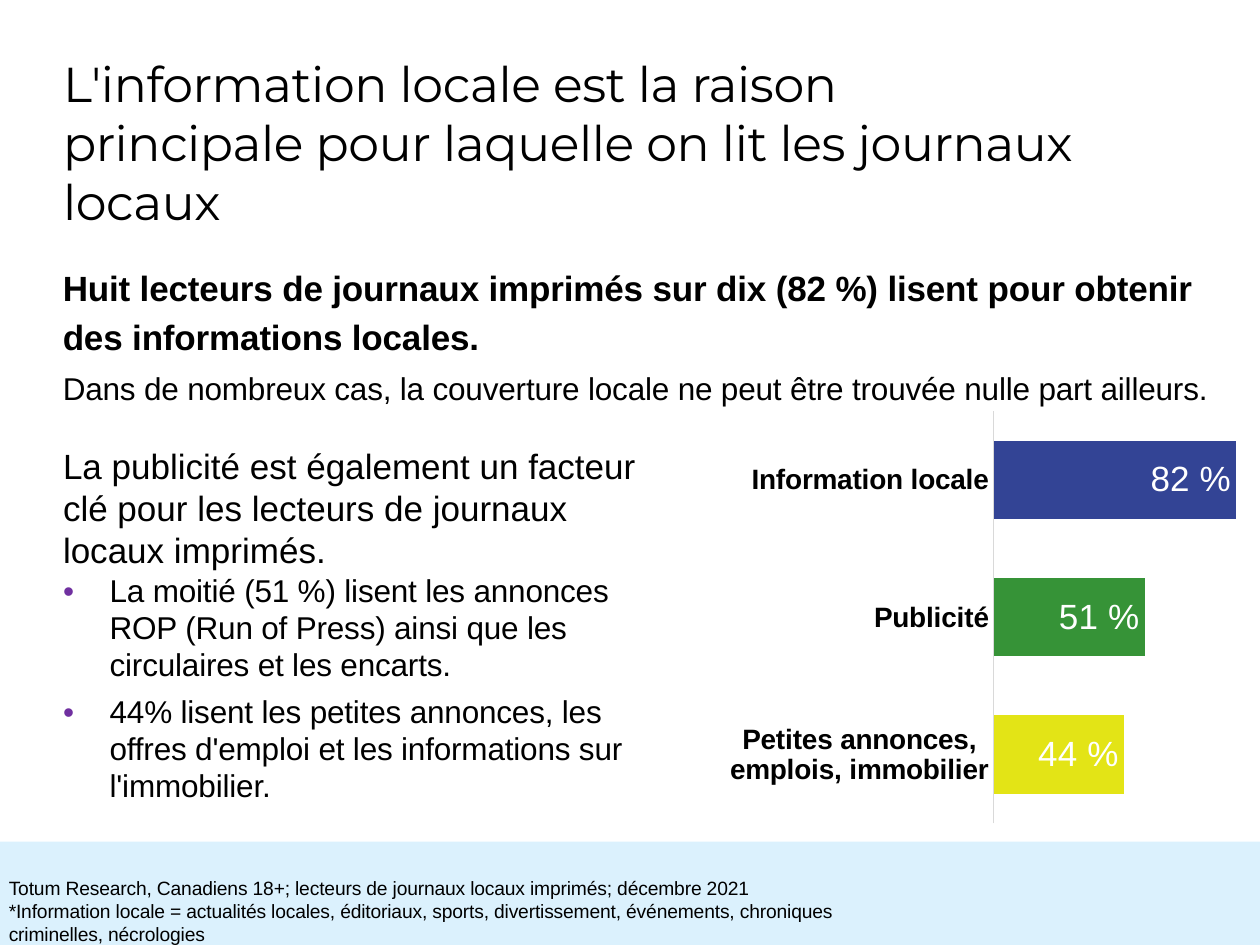
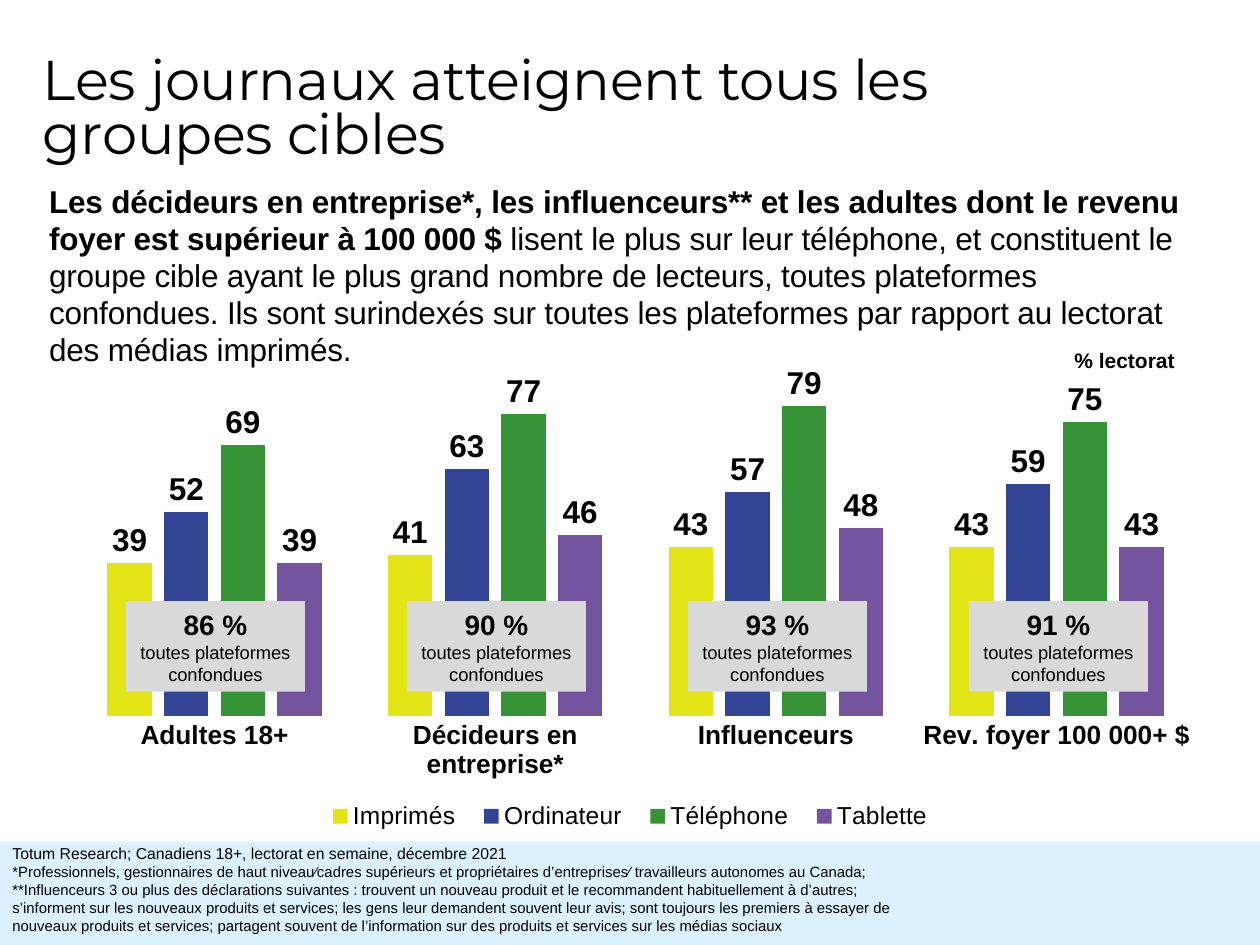
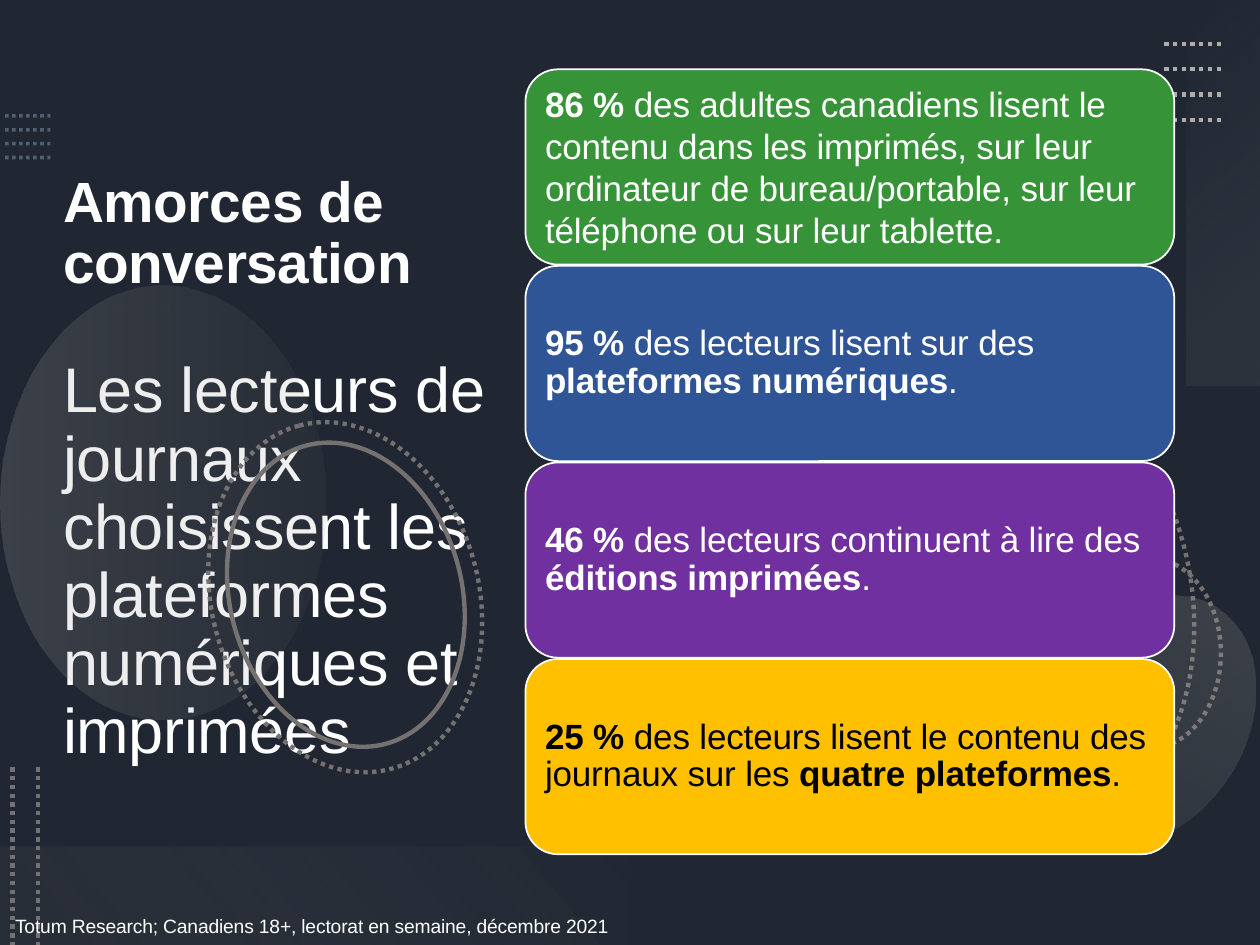
from dataclasses import dataclass
from lxml import etree
from pptx import Presentation
from pptx.chart.data import CategoryChartData as Data
from pptx.dml.color import RGBColor
from pptx.enum.chart import XL_CHART_TYPE as Kind, XL_LABEL_POSITION as Spot
from pptx.enum.chart import XL_LEGEND_POSITION as Side, XL_TICK_MARK as Tick
from pptx.enum.dml import MSO_LINE as Dash
from pptx.enum.shapes import MSO_CONNECTOR as Link, MSO_SHAPE as Form
from pptx.enum.text import MSO_ANCHOR as Anchor, MSO_AUTO_SIZE as Fit, PP_ALIGN as Align
from pptx.oxml.ns import qn
from pptx.util import Inches, Pt

BLACK, WHITE = "000000", "FFFFFF"
PALE, GREY, NIGHT = "DBF1FD", "D9D9D9", "202732"
LIME, NAVY, GREEN, MAUVE = "E3E416", "334495", "369337", "74539F"
BLUE, VIOLET, GOLD = "2F5597", "7030A0", "FFC000"
STEEL, SILVER, STONE = "8497B0", "AFABAB", "767171"
SOURCE = "Totum Research; Canadiens 18+, lectorat en semaine, décembre 2021"


def rgb(code):
    """Turn a hex string into a colour."""
    return RGBColor.from_string(code)


def add(node, tag, **attrs):
    """Append a child element with attributes."""
    child = etree.SubElement(node, qn(tag))
    for key, val in attrs.items():
        child.set(key, str(val))
    return child


def fade(node, part):
    """Set the opacity, in percent, of every colour under a node."""
    for clr in node.iter(qn("a:srgbClr")):
        add(clr, "a:alpha", val=part * 1000)


def place(node, x, y, w, h, inner=False):
    """Give a chart part a manual layout and return it."""
    for old in node.findall(qn("c:layout")):
        node.remove(old)
    lay = add(node, "c:layout")
    man = add(lay, "c:manualLayout")
    if inner:
        add(man, "c:layoutTarget", val="inner")
    for tag in ("xMode", "yMode"):
        add(man, "c:" + tag, val="edge")
    for tag, val in zip("xywh", (x, y, w, h)):
        add(man, "c:" + tag, val=val)
    return lay


@dataclass
class Row:
    """One paragraph; bars in its text switch bold on and off."""
    text: str
    size: float = 18
    color: str = BLACK
    font: str = "Arial"
    bold: bool = False
    align: int = Align.LEFT
    track: int = -10
    lead: object = None
    gap: float = 0
    bullet: str = ""


class Deck:
    """Holds the style and the current slide."""

    def __init__(self):
        """Start a ten by seven and a half inch deck."""
        self.prs = Presentation()
        self.prs.slide_width, self.prs.slide_height = Inches(10), Inches(7.5)

    def page(self, kind, back=WHITE, band=True):
        """Add a slide with its ground and footer band."""
        self.slide = self.prs.slides.add_slide(self.prs.slide_layouts[kind])
        ground = self.slide.background.fill
        ground.solid()
        ground.fore_color.rgb = rgb(back)
        if band:
            self.shape(Form.RECTANGLE, 0, 6.68, 10, 0.82, PALE)

    def put(self, frame, rows, anchor=Anchor.TOP):
        """Fill a text frame with formatted rows."""
        frame.word_wrap = True
        frame.auto_size = Fit.NONE
        frame.vertical_anchor = anchor
        for num, row in enumerate(rows):
            para = frame.add_paragraph() if num else frame.paragraphs[0]
            para.alignment = row.align
            para.space_before = Pt(row.gap)
            if row.lead:
                para.line_spacing = row.lead
            prop = para._p.get_or_add_pPr()
            step = Inches(0.37) if row.bullet else 0
            prop.set("marL", str(step))
            prop.set("indent", str(-step))
            if row.bullet:
                add(add(prop, "a:buClr"), "a:srgbClr", val=row.bullet)
                add(prop, "a:buChar", char="•")
            else:
                add(prop, "a:buNone")
            for turn, part in enumerate(row.text.split("|")):
                if part:
                    run = para.add_run()
                    run.text = part
                    self.style(run.font, row.size, row.bold or turn % 2 == 1, row.color, row.font)
                    run._r.get_or_add_rPr().set("spc", str(row.track))

    def style(self, font, size, bold=False, color=BLACK, name="Arial"):
        """Format a font."""
        font.name, font.size, font.bold = name, Pt(size), bold
        font.color.rgb = rgb(color)

    def hold(self, item, x, y, w, h, rows, anchor=Anchor.TOP):
        """Move a placeholder and fill it."""
        item.left, item.top, item.width, item.height = map(Inches, (x, y, w, h))
        self.put(item.text_frame, rows, anchor)

    def title(self, x, y, w, h, *rows, anchor=Anchor.MIDDLE):
        """Fill the title placeholder."""
        self.hold(self.slide.shapes.title, x, y, w, h, rows, anchor)

    def body(self, x, y, w, h, *rows):
        """Fill the body placeholder."""
        self.hold(self.slide.placeholders[1], x, y, w, h, rows)

    def box(self, x, y, w, h, *rows, inset=0.1):
        """Add a text box."""
        item = self.slide.shapes.add_textbox(*map(Inches, (x, y, w, h)))
        item.text_frame.margin_left = Inches(inset)
        self.put(item.text_frame, rows)

    def shape(self, form, x, y, w, h, fill=None, line=None, width=2.5, dash=None, turn=0):
        """Add a preset shape; a tuple fill is an angle and its stops."""
        item = self.slide.shapes.add_shape(form, *map(Inches, (x, y, w, h)))
        item.shadow.inherit = False
        item.rotation = turn
        if isinstance(fill, tuple):
            self.blend(item, *fill)
        elif fill:
            item.fill.solid()
            item.fill.fore_color.rgb = rgb(fill)
        else:
            item.fill.background()
        if line:
            self.stroke(item.line, line, width, dash)
        else:
            item.line.fill.background()
        return item

    def blend(self, item, angle, *stops):
        """Fill a shape with a see-through gradient."""
        prop = item._element.spPr
        grad = add(prop, "a:gradFill", rotWithShape=1)
        group = add(grad, "a:gsLst")
        for pos, color, part in stops:
            stop = add(group, "a:gs", pos=pos * 1000)
            add(stop, "a:srgbClr", val=color)
            fade(stop, part)
        add(grad, "a:lin", ang=angle * 60000, scaled=0)
        prop.find(qn("a:prstGeom")).addnext(grad)

    def stroke(self, line, color, width, dash):
        """Format an outline."""
        line.color.rgb = rgb(color)
        line.width = Pt(width)
        if dash:
            line.dash_style = dash

    def dots(self, x, y, far, low, color, width=2.5, part=None):
        """Add a dotted line."""
        item = self.slide.shapes.add_connector(Link.STRAIGHT, *map(Inches, (x, y, far, low)))
        self.stroke(item.line, color, width, Dash.ROUND_DOT)
        if part:
            fade(item._element.spPr, part)
        add(item._element.spPr, "a:effectLst")

    def chart(self, kind, area, plot, cats, sets, top, gap, size):
        """Add a bar chart with a hidden value axis."""
        data = Data()
        data.categories = cats
        for name, vals in sets:
            data.add_series(name, vals)
        chart = self.slide.shapes.add_chart(kind, *map(Inches, area), data).chart
        self.style(chart.font, size)
        chart.has_title = chart.has_legend = False
        axis = chart.value_axis
        axis.minimum_scale, axis.maximum_scale = 0, top
        axis.has_major_gridlines = axis.visible = False
        chart.category_axis.major_tick_mark = Tick.NONE
        self.style(chart.category_axis.tick_labels.font, size, True)
        chart.plots[0].gap_width = gap
        chart.plots[0].vary_by_categories = False
        zone = chart._chartSpace.chart.plotArea
        zone.insert(0, place(zone, *plot, inner=True))
        return chart

    def paint(self, part, color):
        """Fill a chart series or point."""
        part.format.fill.solid()
        part.format.fill.fore_color.rgb = rgb(color)

    def label(self, series, spot, size, form, bold=False, color=BLACK):
        """Show the values of a series."""
        tags = series.data_labels
        tags.show_value = True
        tags.position = spot
        tags.number_format, tags.number_format_is_linked = form, False
        self.style(tags.font, size, bold, color)


def reason(deck):
    """Build the slide on why people read."""
    deck.page(1)
    deck.title(0.4, 0.4, 8.3, 1.45, Row(
        "L'information locale est la raison principale pour laquelle on lit les journaux locaux",
        28, font="Montserrat", track=-20))
    deck.box(0, 6.91, 7.4, 0.59,
             Row("Totum Research, Canadiens 18+; lecteurs de journaux locaux imprimés; décembre 2021",
                 11, lead=Pt(13.1)),
             Row("*Information locale = actualités locales, éditoriaux, sports, divertissement, "
                 "événements, chroniques criminelles, nécrologies", 11, lead=Pt(13.1)), inset=0.07)
    deck.body(0.4, 3.48, 5, 3.1,
              Row("La publicité est également un facteur clé pour les lecteurs de journaux "
                  "locaux imprimés.", 20, track=0),
              Row("La moitié (51 %) lisent les annonces ROP (Run of Press) ainsi que les "
                  "circulaires et les encarts.", lead=0.98, gap=1.4, bullet=VIOLET),
              Row("44% lisent les petites annonces, les offres d'emploi et les informations sur "
                  "l'immobilier.", lead=0.97, gap=5.7, bullet=VIOLET))
    chart = deck.chart(Kind.BAR_CLUSTERED, (5.6, 3.16, 4.4, 3.48), (0.52, 0.03, 0.48, 0.94),
                       ["Petites annonces, emplois, immobilier", "Publicité", "Information locale"],
                       [("Lecteurs", [0.44, 0.51, 0.82])], 0.9, 75, 16)
    edge = chart.category_axis.format.line
    edge.color.rgb = rgb(GREY)
    edge.width = Pt(0.75)
    bars = chart.plots[0].series[0]
    for num, color in enumerate((LIME, GREEN, NAVY)):
        deck.paint(bars.points[num], color)
    deck.label(bars, Spot.INSIDE_END, 20, "0 %", color=WHITE)
    deck.box(0.4, 2.01, 9.42, 1.24,
             Row("Huit lecteurs de journaux imprimés sur dix (82 %) lisent pour obtenir des "
                 "informations locales.", 20, bold=True, lead=Pt(28.1)),
             Row("Dans de nombreux cas, la couverture locale ne peut être trouvée nulle part "
                 "ailleurs.", lead=Pt(27.9)))


def reach(deck):
    """Build the slide on target groups."""
    deck.page(5)
    chart = deck.chart(Kind.COLUMN_CLUSTERED, (0.5, 2.06, 9, 4.83), (0.01, 0.17, 0.99, 0.58),
                       ["Adultes 18+", "Décideurs en entreprise*", "Influenceurs",
                        "Rev. foyer 100 000+ $"],
                       [("Imprimés", [39, 41, 43, 43]), ("Ordinateur", [52, 63, 57, 59]),
                        ("Téléphone", [69, 77, 79, 75]), ("Tablette", [39, 46, 48, 43])],
                       90, 150, 15)
    chart.plots[0].overlap = -28
    chart.category_axis.format.line.fill.background()
    for series, color in zip(chart.plots[0].series, (LIME, NAVY, GREEN, MAUVE)):
        deck.paint(series, color)
        deck.label(series, Spot.OUTSIDE_END, 18, "0", True)
    chart.has_legend = True
    key = chart.legend
    key.position = Side.BOTTOM
    key.include_in_layout = False
    deck.style(key.font, 14)
    node = key._element
    node.find(qn("c:legendPos")).addnext(place(node, 0.22, 0.88, 0.56, 0.07))
    deck.title(0.24, 0.41, 8.19, 0.98,
               Row("Les journaux atteignent tous les groupes cibles", 32,
                   font="Montserrat", track=-20, lead=0.8), anchor=Anchor.TOP)
    deck.box(0.26, 1.41, 9.33, 1.6,
             Row("|Les décideurs en entreprise*, les influenceurs** et les adultes dont le revenu "
                 "foyer est supérieur à 100 000 $ |lisent le plus sur leur téléphone, et "
                 "constituent le groupe cible ayant le plus grand nombre de lecteurs, toutes "
                 "plateformes confondues. Ils sont surindexés sur toutes les plateformes par "
                 "rapport au lectorat des médias imprimés.", lead=0.98), inset=0.13)
    deck.box(0, 6.65, 7.32, 0.82, Row(SOURCE, 9, track=0),
             Row("*Professionnels, gestionnaires de haut niveau∕cadres supérieurs et propriétaires "
                 "d’entreprises∕ travailleurs autonomes au Canada; **Influenceurs 3 ou plus des "
                 "déclarations suivantes : trouvent un nouveau produit et le recommandent "
                 "habituellement à d’autres; s’informent sur les nouveaux produits et services; "
                 "les gens leur demandent souvent leur avis; sont toujours les premiers à essayer "
                 "de nouveaux produits et services; partagent souvent de l’information sur des "
                 "produits et services sur les médias sociaux", 8.5, track=0))
    for num, share in enumerate((86, 90, 93, 91)):
        tag = deck.shape(Form.RECTANGLE, 1 + num * 2.23, 4.77, 1.42, 0.72, GREY)
        deck.put(tag.text_frame, [
            Row(f"{share} %", 16, bold=True, align=Align.CENTER, track=0),
            Row("toutes plateformes confondues", 10.5, align=Align.CENTER, track=0)])
    deck.box(8.25, 2.71, 1.35, 0.3,
             Row("% lectorat", 12, bold=True, align=Align.CENTER, track=0))


def decor(deck):
    """Draw the dotted lines, rings and soft shapes of the dark slide."""
    for num in range(4):
        low, high = 0.92 + num * 0.11, 0.35 + num * 0.2
        deck.dots(0.04, low, 0.4, low, STEEL, 2, 50)
        deck.dots(9.24, high, 9.69, high, SILVER)
    for x, y, w, h, turn, dash in (
            (6.03, 3.23, 3.9, 2.92, 75, Dash.ROUND_DOT),
            (8.56, 4.43, 1.13, 1.51, 0, Dash.ROUND_DOT),
            (1.33, 3.68, 2.82, 2.12, 75, Dash.ROUND_DOT),
            (1.52, 3.8, 2.45, 1.84, 75, None)):
        deck.shape(Form.OVAL, x, y, w, h, line=STONE, dash=dash, turn=turn)
    deck.shape(Form.OVAL, 0, 2.27, 2.58, 3.44, (0, (0, SILVER, 20), (100, STONE, 10)))
    deck.shape(Form.OVAL, 8.33, 4.67, 1.56, 2.08,
               (90, (0, SILVER, 10), (100, SILVER, 20)), turn=210)
    deck.shape(Form.RECTANGLE, 9.42, 0, 0.58, 3.06, (50, (0, "F5F5F5", 0), (100, SILVER, 10)))
    deck.shape(Form.RECTANGLE, 0, 6.72, 5, 0.78, (320, (10, STONE, 10), (100, "F1F0F0", 0)))
    for x in (0.1, 0.3):
        deck.dots(x, 6.09, x, 7.5, STONE)


def talk(deck):
    """Build the slide of conversation starters."""
    deck.page(5, NIGHT, False)
    decor(deck)
    deck.title(0.4, 0.75, 3.73, 5.96,
               Row("Amorces de conversation", 32.4, WHITE, bold=True, track=-20, lead=0.9),
               Row("Les lecteurs de journaux choisissent les plateformes numériques et imprimées",
                   36, WHITE, track=-20, lead=0.9, gap=36))
    deck.box(0.01, 7.21, 8.17, 0.29, Row(SOURCE, 11, WHITE), inset=0.11)
    cards = (
        (GREEN, WHITE, 1.0, "|86 % |des adultes canadiens lisent le contenu dans les imprimés, sur "
         "leur ordinateur de bureau/portable, sur leur téléphone ou sur leur tablette."),
        (BLUE, WHITE, 0.9, "|95 % |des lecteurs lisent sur des |plateformes numériques|."),
        (VIOLET, WHITE, 0.9, "|46 % |des lecteurs continuent à lire des |éditions imprimées|."),
        (GOLD, BLACK, 0.9, "|25 % |des lecteurs lisent le contenu des journaux sur les "
         "|quatre plateformes|."))
    for num, (fill, ink, lead, text) in enumerate(cards):
        card = deck.shape(Form.ROUNDED_RECTANGLE, 4.17, 0.55 + num * 1.56, 5.15, 1.55,
                          fill, WHITE, 1)
        frame = card.text_frame
        frame.margin_left = frame.margin_right = Inches(0.08)
        deck.put(frame, [Row(text, 20, ink, lead=lead)], Anchor.MIDDLE)


def main():
    """Build and save the deck."""
    deck = Deck()
    for build in (reason, reach, talk):
        build(deck)
    deck.prs.save("out.pptx")


if __name__ == "__main__":
    main()
